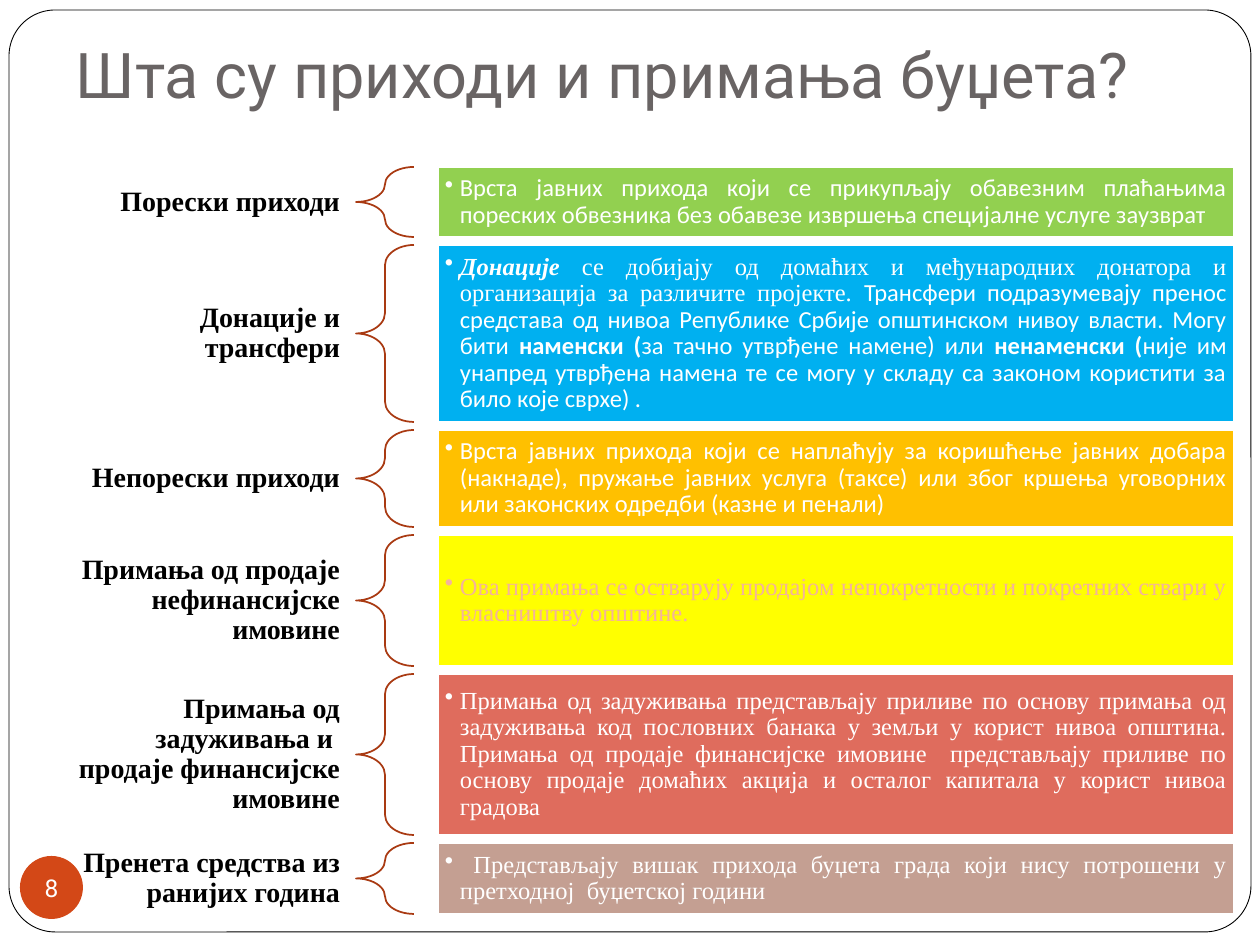
import pptx
import pptx.dml.color
import pptx.enum.shapes
import pptx.enum.text
import pptx.oxml.ns
import pptx.util
from lxml import etree

PX = 914400 // 126
SERIF, SANS, HEADING = "Times New Roman", "Calibri", "Roboto"
WHITE = "FFFFFF"
GAP = 8
FIRST_TOP = 167
SHAPE = pptx.enum.shapes.MSO_SHAPE
ALIGN = pptx.enum.text.PP_ALIGN
ANCHOR = pptx.enum.text.MSO_ANCHOR

# Category, label height, row height, fill, text colour, runs (text, font, bold, italic)
ROWS = [
    ("Порески приходи", 44, 70, "92D050", WHITE, [
        ("Врста јавних прихода који се прикупљају обавезним плаћањима пореских "
         "обвезника без обавезе извршења специјалне услуге заузврат", SANS, False, False)]),
    ("Донације и трансфери", 71, 177, "00B0F0", WHITE, [
        ("Донације ", SERIF, True, True),
        ("се добијају од домаћих и међународних донатора и организација "
         "за различите пројекте. ", SERIF, False, False),
        ("Трансфери подразумевају пренос средстава од нивоа Републике Србије "
         "општинском нивоу власти. Могу бити ", SANS, False, False),
        ("наменски (", SANS, True, False),
        ("за тачно утврђене намене) или ", SANS, False, False),
        ("ненаменски (", SANS, True, False),
        ("није им унапред утврђена намена те се могу у складу са законом "
         "користити за било које сврхе) .", SANS, False, False)]),
    ("Непорески приходи", 71, 97, "FFC000", WHITE, [
        ("Врста јавних прихода који се наплаћују за коришћење јавних добара "
         "(накнаде), пружање јавних услуга (таксе) или због кршења уговорних "
         "или законских одредби (казне и пенали)", SANS, False, False)]),
    ("Примања од продаје нефинансијске имовине", 131, 131, "FFFF00", "F4B39B", [
        ("Ова примања се остварују продајом непокретности и покретних ствари "
         "у власништву општине.", SERIF, False, False)]),
    ("Примања од задуживања и  продаје финансијске имовине", 161, 161, "DF6C5D", WHITE, [
        ("Примања од задуживања представљају приливе по основу примања од "
         "задуживања код пословних банака у земљи у корист нивоа општина. "
         "Примања од продаје финансијске имовине  представљају приливе по основу "
         "продаје домаћих акција и осталог капитала у корист нивоа градова",
         SERIF, False, False)]),
    ("Пренета средства из ранијих година", 71, 71, "C49F92", WHITE, [
        (" Представљају вишак прихода буџета града који нису потрошени "
         "у претходној  буџетској години", SERIF, False, False)]),
]


def rgb(value):
    return pptx.dml.color.RGBColor.from_string(value)


def to_emu(*lengths):
    return [length * PX for length in lengths]


def add_shape(slide, kind, box, fill=None, line=None, weight=1):
    shape = slide.shapes.add_shape(kind, *to_emu(*box))
    shape.shadow.inherit = False
    if fill:
        shape.fill.solid()
        shape.fill.fore_color.rgb = rgb(fill)
    else:
        shape.fill.background()
    if line:
        shape.line.color.rgb = rgb(line)
        shape.line.width = pptx.util.Pt(weight)
    else:
        shape.line.fill.background()
    return shape


def set_frame(frame, margins, anchor=ANCHOR.MIDDLE, wrap=True):
    """Margins are left, top, right and bottom."""
    frame.word_wrap = wrap
    frame.vertical_anchor = anchor
    (frame.margin_left, frame.margin_top,
     frame.margin_right, frame.margin_bottom) = to_emu(*margins)


def set_font(font, size, color, name=None, bold=None):
    font.size = pptx.util.Pt(size)
    font.color.rgb = rgb(color)
    font.name = name
    font.bold = bold


def add_text(slide, box, text, margins, anchor, align, size, color, name, bold=False):
    frame = slide.shapes.add_textbox(*to_emu(*box)).text_frame
    set_frame(frame, margins, anchor)
    paragraph = frame.paragraphs[0]
    paragraph.text = text
    paragraph.alignment = align
    set_font(paragraph.font, size, color, name, bold)
    return paragraph


def add_bullet(paragraph, indent):
    properties = paragraph._p.get_or_add_pPr()
    properties.set("marL", str(indent * PX))
    properties.set("indent", str(-indent * PX))
    etree.SubElement(properties, pptx.oxml.ns.qn("a:buChar")).set("char", "•")


def add_description(slide, box, fill, color, runs):
    panel = add_shape(slide, SHAPE.RECTANGLE, box, fill, WHITE)
    set_frame(panel.text_frame, (7, 7, 7, 7))
    paragraph = panel.text_frame.paragraphs[0]
    paragraph.alignment = ALIGN.JUSTIFY
    paragraph.line_spacing = 0.9
    add_bullet(paragraph, 15)
    set_font(paragraph.font, 14, color)
    for text, name, bold, italic in runs:
        run = paragraph.add_run()
        run.text = text
        run.font.name, run.font.bold, run.font.italic = name, bold, italic


def add_row(slide, top, category, label_height, height, fill, color, runs):
    label_top = top + (height - label_height) // 2
    label = add_text(slide, (63, label_top, 292, label_height), category, (15, 5, 15, 5),
                     ANCHOR.MIDDLE, ALIGN.RIGHT, 16, "000000", SERIF, True)
    label.line_spacing = 0.9
    brace = add_shape(slide, SHAPE.LEFT_BRACE, (356, top, 58, height), line="A93A12")
    brace.adjustments[0] = 0.35
    add_description(slide, (438, top, 796, height), fill, color, runs)


def add_page_number(slide, number):
    badge = add_shape(slide, SHAPE.OVAL, (20, 856, 63, 63), "D34817")
    set_frame(badge.text_frame, (0, 0, 0, 0), wrap=False)
    paragraph = badge.text_frame.paragraphs[0]
    paragraph.text = number
    paragraph.alignment = ALIGN.CENTER
    set_font(paragraph.font, 14, WHITE, HEADING)


def main():
    presentation = pptx.Presentation()
    presentation.slide_width, presentation.slide_height = to_emu(1260, 945)
    slide = presentation.slides.add_slide(presentation.slide_layouts[6])

    border = add_shape(slide, SHAPE.ROUNDED_RECTANGLE, (9, 10, 1242, 922),
                       WHITE, "000000", 0.5)
    border.adjustments[0] = 0.05
    add_text(slide, (63, 38, 1134, 86), "Шта су приходи и примања буџета?",
             (13, 6, 13, 13), ANCHOR.BOTTOM, ALIGN.LEFT, 36, "696464", HEADING)
    add_page_number(slide, "8")

    top = FIRST_TOP
    for category, label_height, height, fill, color, runs in ROWS:
        add_row(slide, top, category, label_height, height, fill, color, runs)
        top += height + GAP

    presentation.save("out.pptx")


if __name__ == "__main__":
    main()
